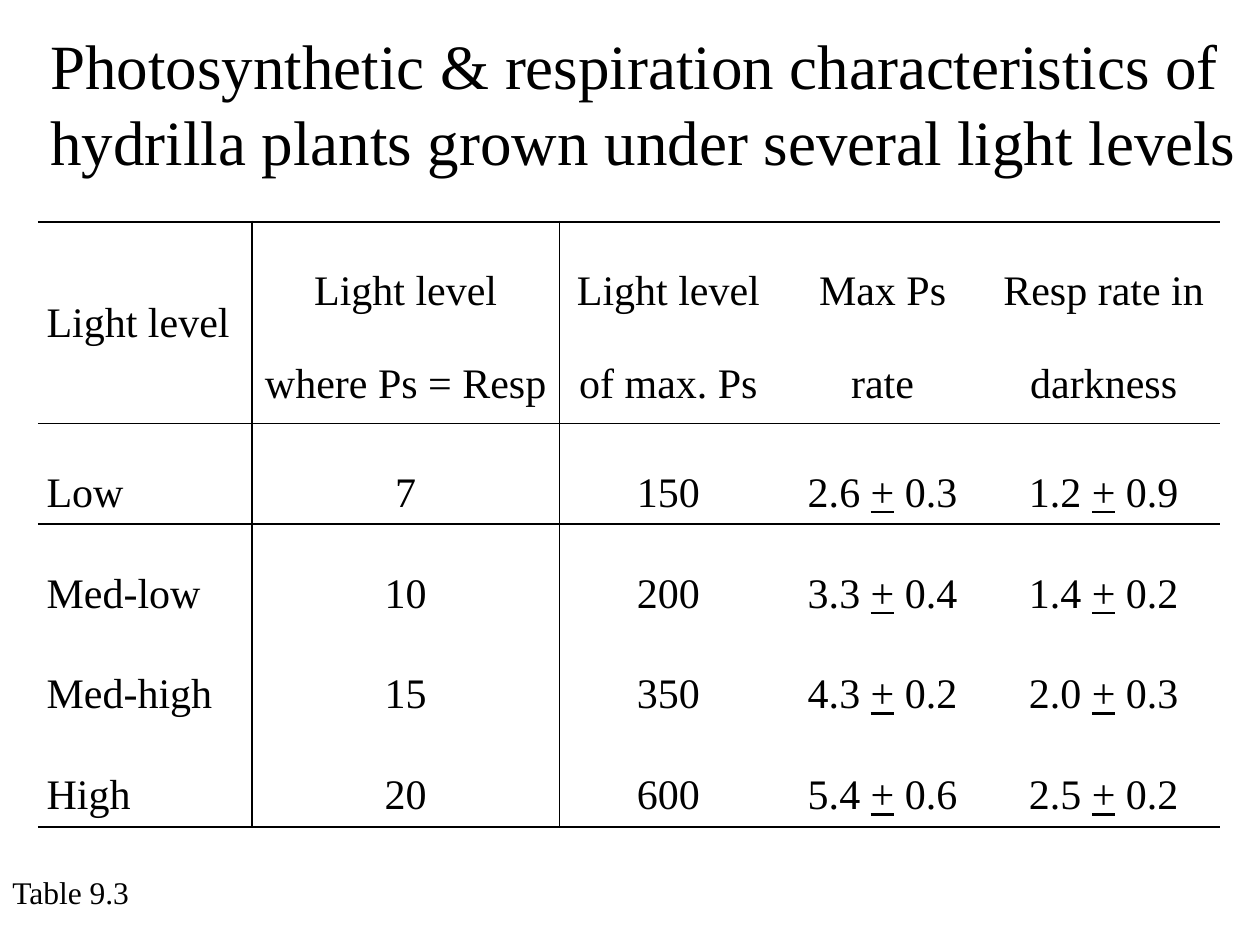
from dataclasses import dataclass

from lxml.etree import SubElement
from pptx import Presentation
from pptx.dml.color import RGBColor
from pptx.enum.text import MSO_ANCHOR, MSO_AUTO_SIZE, PP_ALIGN
from pptx.oxml.ns import qn
from pptx.util import Inches, Pt


@dataclass(frozen=True)
class Theme:
    font: str = "Times New Roman"
    ink: str = "000000"
    title: int = 36
    body: int = 24
    note: int = 18
    thick: float = 1.5
    thin: float = 1


BARE = "{2D5ABB26-0587-4C30-8999-92F81FD0307C}"  # no style, no grid
SIGN = "+"  # underlined, it reads as plus or minus

WIDTHS = [1.7, 2.44, 1.73, 1.67, 1.84]
HEAD, ROW = 1.6, 0.8
DATA = [
    ["Light level", "Light level where Ps = Resp", "Light level of max. Ps",
     "Max Ps rate", "Resp rate in darkness"],
    ["Low", "7", "150", "2.6 + 0.3", "1.2 + 0.9"],
    ["Med-low", "10", "200", "3.3 + 0.4", "1.4 + 0.2"],
    ["Med-high", "15", "350", "4.3 + 0.2", "2.0 + 0.3"],
    ["High", "20", "600", "5.4 + 0.6", "2.5 + 0.2"],
]


def write(frame, text, theme, size, align=PP_ALIGN.LEFT, space=None):
    """Write one paragraph, underlining each plus sign."""
    para = frame.paragraphs[0]
    para.alignment = align
    if space:
        para.line_spacing = space
    left, sign, right = text.partition(SIGN)
    for part in filter(None, (left, sign, right)):
        run = para.add_run()
        run.text = part
        font = run.font
        font.name, font.size = theme.font, Pt(size)
        font.color.rgb = RGBColor.from_string(theme.ink)
        if part == SIGN:
            font.underline = True


class Page:
    def __init__(self, deck, theme):
        self.theme = theme
        self.slide = deck.slides.add_slide(deck.slide_layouts[5])

    def title(self, text, left, top, width, height):
        box = self.slide.shapes.title
        box.left, box.top = Inches(left), Inches(top)
        box.width, box.height = Inches(width), Inches(height)
        frame = box.text_frame
        frame.word_wrap = True
        frame.auto_size = MSO_AUTO_SIZE.SHAPE_TO_FIT_TEXT
        frame.vertical_anchor = MSO_ANCHOR.TOP
        write(frame, text, self.theme, self.theme.title)

    def note(self, text, left, top, width, height):
        box = self.slide.shapes.add_textbox(
            Inches(left), Inches(top), Inches(width), Inches(height))
        frame = box.text_frame
        frame.word_wrap = False
        frame.auto_size = MSO_AUTO_SIZE.SHAPE_TO_FIT_TEXT
        write(frame, text, self.theme, self.theme.note)

    def table(self, data, left, top):
        last = len(data) - 1
        high = HEAD + ROW * last
        shape = self.slide.shapes.add_table(
            len(data), len(WIDTHS), Inches(left), Inches(top),
            Inches(sum(WIDTHS)), Inches(high))
        grid = shape.table
        grid.horz_banding = False
        grid._tbl.tblPr.find(qn("a:tableStyleId")).text = BARE
        for col, width in zip(grid.columns, WIDTHS):
            col.width = Inches(width)
        for r, line in enumerate(data):
            grid.rows[r].height = Inches(ROW if r else HEAD)
            for c, text in enumerate(line):
                self.cell(grid.cell(r, c), text, r, c, last)

    def cell(self, cell, text, r, c, last):
        theme = self.theme
        cell.margin_left = cell.margin_right = Inches(0.07)
        # The corner label sits lower than the two-line headings
        cell.margin_top = Inches(0 if r or c else 0.25)
        cell.margin_bottom = 0
        cell.vertical_anchor = MSO_ANCHOR.TOP
        write(cell.text_frame, text, theme, theme.body, space=2.0,
              align=PP_ALIGN.CENTER if c else PP_ALIGN.LEFT)

        # Rules: outer top and bottom, below the header, beside the labels
        rules = {}
        if c < 2:
            rules["L" if c else "R"] = theme.thin
        if r < 2:
            rules["T"] = theme.thin if r else theme.thick
        if r in (0, last):
            rules["B"] = theme.thick if r else theme.thin
        for side, width in rules.items():
            self.rule(cell, side, width)
        cell.fill.background()

    def rule(self, cell, side, width):
        line = SubElement(cell._tc.get_or_add_tcPr(), qn(f"a:ln{side}"),
                          w=str(Pt(width)))
        fill = SubElement(line, qn("a:solidFill"))
        SubElement(fill, qn("a:srgbClr"), val=self.theme.ink)


def main():
    deck = Presentation()
    deck.slide_width, deck.slide_height = Inches(10), Inches(7.5)
    page = Page(deck, Theme())
    page.title("Photosynthetic & respiration characteristics of hydrilla "
               "plants grown under several light levels", 0.3, 0.16, 9.7, 1.31)
    page.table(DATA, 0.3, 1.76)
    page.note("Table 9.3", 0, 6.88, 1.2, 0.4)
    deck.save("out.pptx")


if __name__ == "__main__":
    main()
